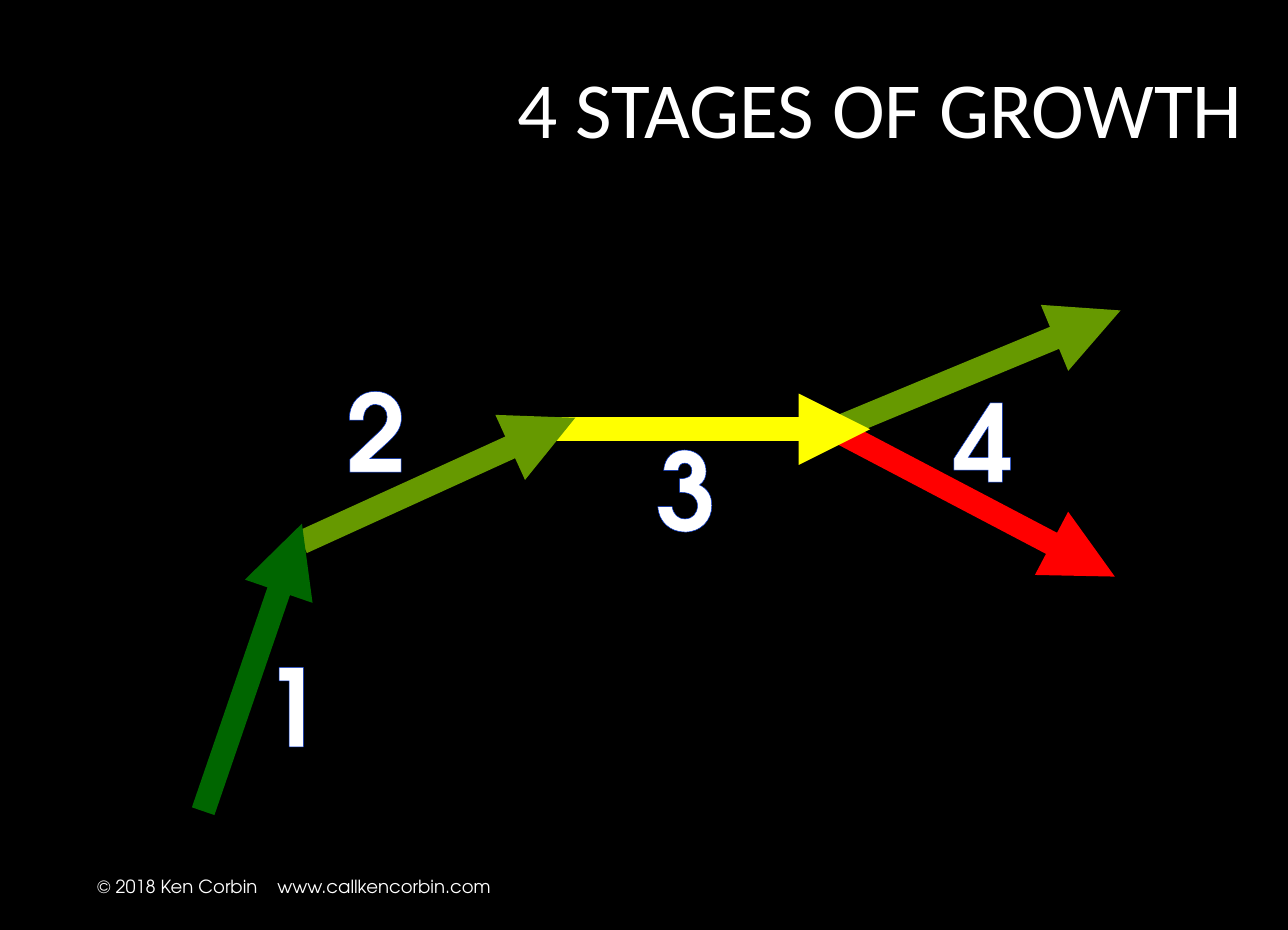
from lxml.etree import SubElement
from pptx import Presentation
from pptx.dml.color import RGBColor
from pptx.enum.shapes import MSO_CONNECTOR as CONNECTOR
from pptx.enum.text import MSO_ANCHOR as ANCHOR, MSO_AUTO_SIZE as AUTO_SIZE, PP_ALIGN as ALIGN
from pptx.oxml.ns import qn
from pptx.util import Inches, Pt

COLORS = {
    "background": "000000",
    "text": "FFFFFF",
    "outline": "0033CC",
    "rise": "006600",
    "growth": "669900",
    "plateau": "FFFF00",
    "decline": "FF0000",
}
BODY_FONT = "TeX Gyre Adventor"

ARROWS = [
    ((5.83, 3), (7.83, 2.17), "growth"),
    ((5.83, 3), (7.79, 4.03), "decline"),
    ((3.75, 3), (6.08, 3), "plateau"),
    ((2.11, 3.79), (4.02, 2.92), "growth"),
    ((1.42, 5.67), (2.11, 3.66), "rise"),
]
STAGES = [("4", 6.5, 2.57), ("1", 1.67, 4.42), ("3", 4.42, 2.91), ("2", 2.25, 2.5)]


def rgb(name):
    return RGBColor.from_string(COLORS[name])


def add_text(slide, text, box, size, font=BODY_FONT, bold=False, align=ALIGN.LEFT,
             anchor=ANCHOR.MIDDLE, spacing=None, outline=None, tab=None, grow=False):
    frame = slide.shapes.add_textbox(*map(Inches, box)).text_frame
    frame.word_wrap = True
    frame.vertical_anchor = anchor
    frame.auto_size = AUTO_SIZE.SHAPE_TO_FIT_TEXT if grow else AUTO_SIZE.NONE
    line = frame.paragraphs[0]
    line.alignment = align
    if spacing:
        line.line_spacing = spacing
    if tab:
        stops = SubElement(line._p.get_or_add_pPr(), qn("a:tabLst"))
        SubElement(stops, qn("a:tab"), pos=str(Inches(tab)), algn="l")
    run = line.add_run()
    run.text = text
    run.font.name = font
    run.font.size = Pt(size)
    run.font.bold = bold
    run.font.color.rgb = rgb("text")
    if outline:
        properties = run.font._element
        stroke = SubElement(properties, qn("a:ln"), w=str(Pt(1.06)))
        fill = SubElement(stroke, qn("a:solidFill"))
        SubElement(fill, qn("a:srgbClr"), val=COLORS[outline])
        properties.insert(0, stroke)


def add_arrow(slide, start, end, color):
    arrow = slide.shapes.add_connector(CONNECTOR.STRAIGHT, *map(Inches, start + end))
    arrow.line.color.rgb = rgb(color)
    arrow.line.width = Pt(12)
    SubElement(arrow.line._get_or_add_ln(), qn("a:tailEnd"), type="triangle")
    SubElement(arrow._element.spPr, qn("a:effectLst"))


def main():
    deck = Presentation()
    deck.slide_width = Inches(9)
    deck.slide_height = Inches(6.5)
    slide = deck.slides.add_slide(deck.slide_layouts[6])
    backdrop = slide.background.fill
    backdrop.solid()
    backdrop.fore_color.rgb = rgb("background")

    add_text(slide, "4 STAGES OF GROWTH", (2.5, 0.32, 6.28, 0.93), 40,
             font="Calibri", align=ALIGN.RIGHT, spacing=0.9)
    add_text(slide, "© 2018 Ken Corbin\twww.callkencorbin.com",
             (0.58, 6.02, 5.59, 0.35), 9.1, tab=1.26)
    for start, end, color in ARROWS:
        add_arrow(slide, start, end, color)
    for number, left, top in STAGES:
        add_text(slide, number, (left, top, 0.75, 1.01), 54, bold=True,
                 align=ALIGN.CENTER, anchor=ANCHOR.TOP, outline="outline", grow=True)

    deck.save("out.pptx")


if __name__ == "__main__":
    main()
